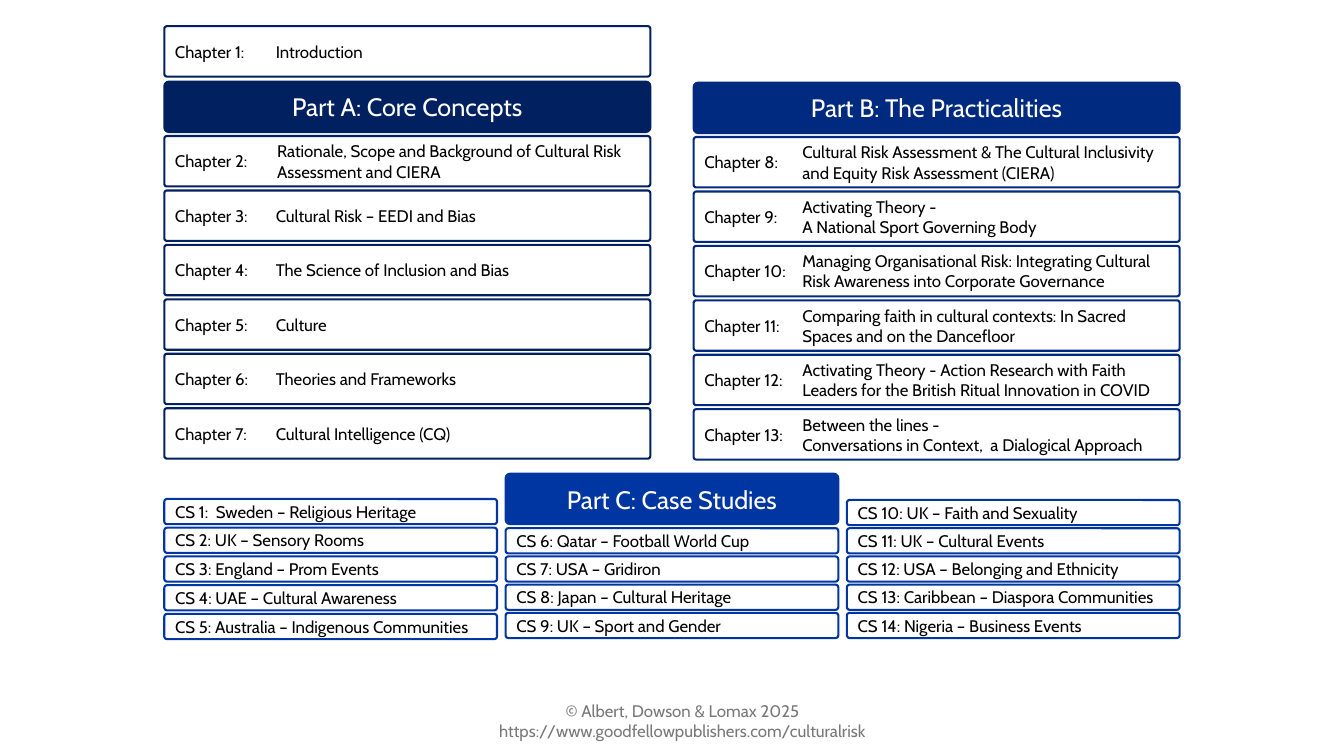
from pptx import Presentation
from pptx.dml.color import RGBColor
from pptx.enum import shapes, text
from pptx.util import Inches, Pt

FONT = "Cabin"
COLORS = {"core": "002060", "practice": "002A7F", "cases": "0036A1",
          "white": "FFFFFF", "black": "000000", "grey": "797979"}

INTRODUCTION = "Introduction"
# heading, colour, left, top, title offset, first chapter, chapter titles
PARTS = [
    ("Part A: Core Concepts", "core", 1.63, 0.81, 1.02, 2, [
        "Rationale, Scope and Background of Cultural Risk Assessment and CIERA",
        "Cultural Risk – EEDI and Bias",
        "The Science of Inclusion and Bias",
        "Culture",
        "Theories and Frameworks",
        "Cultural Intelligence (CQ)",
    ]),
    ("Part B: The Practicalities", "practice", 6.88, 0.82, 0.98, 8, [
        "Cultural Risk Assessment & The Cultural Inclusivity and Equity Risk Assessment (CIERA)",
        "Activating Theory -\nA National Sport Governing Body",
        "Managing Organisational Risk: Integrating Cultural Risk Awareness into Corporate Governance",
        "Comparing faith in cultural contexts: In Sacred Spaces and on the Dancefloor",
        "Activating Theory - Action Research with Faith Leaders for the British Ritual Innovation in COVID",
        "Between the lines -\nConversations in Context,  a Dialogical Approach",
    ]),
]
CASES_HEADING = "Part C: Case Studies"
# top, row step, case studies
CASE_COLUMNS = [
    (4.95, 0.285, ["CS 1:  Sweden – Religious Heritage", "CS 2: UK – Sensory Rooms",
                   "CS 3: England – Prom Events", "CS 4: UAE – Cultural Awareness",
                   "CS 5: Australia – Indigenous Communities"]),
    (5.24, 0.28, ["CS 6: Qatar – Football World Cup", "CS 7: USA – Gridiron",
                  "CS 8: Japan – Cultural Heritage", "CS 9: UK – Sport and Gender"]),
    (4.96, 0.28, ["CS 10: UK – Faith and Sexuality", "CS 11: UK – Cultural Events",
                  "CS 12: USA – Belonging and Ethnicity",
                  "CS 13: Caribbean – Diaspora Communities",
                  "CS 14: Nigeria – Business Events"]),
]
FOOTER = "© Albert, Dowson & Lomax 2025 https://www.goodfellowpublishers.com/culturalrisk"

PART_WIDTH, BAR_HEIGHT, CHAPTER_STEP = 4.82, 0.5, 0.54
CASE_LEFT, CASE_WIDTH, CASE_HEIGHT, CASE_STEP = 1.63, 3.3, 0.25, 3.385
ONE_LINE = 40  # longest title that fits beside its chapter number


def rgb(name):
    return RGBColor.from_string(COLORS[name])


def write(shape, words, size=12, color="black", align=text.PP_ALIGN.LEFT):
    frame = shape.text_frame
    frame.word_wrap = True
    frame.vertical_anchor = text.MSO_ANCHOR.MIDDLE
    frame.text = words
    for paragraph in frame.paragraphs:
        paragraph.alignment = align
        for run in paragraph.runs:
            run.font.name = FONT
            run.font.size = Pt(size)
            run.font.color.rgb = rgb(color)


def add_bar(slide, box, words, fill, line, rounding, **style):
    bar = slide.shapes.add_shape(shapes.MSO_SHAPE.ROUNDED_RECTANGLE, *map(Inches, box))
    bar.adjustments[0] = rounding
    bar.shadow.inherit = False
    bar.fill.solid()
    bar.fill.fore_color.rgb = rgb(fill)
    bar.line.color.rgb = rgb(line)
    bar.line.width = Pt(1.5)
    write(bar, words, **style)


def add_heading(slide, left, top, width, words, color):
    add_bar(slide, (left, top, width, BAR_HEIGHT), words, color, color, 0.09,
            size=18, color="white", align=text.PP_ALIGN.CENTER)


def add_label(slide, box, words, **style):
    write(slide.shapes.add_textbox(*map(Inches, box)), words, **style)


def add_chapter(slide, left, top, number, title, color, title_offset):
    """Long titles get their own box, so the number stays centred beside two lines."""
    label = f"Chapter {number}:"
    is_long = len(title) > ONE_LINE
    add_bar(slide, (left, top, PART_WIDTH, BAR_HEIGHT),
            label if is_long else f"{label} \t{title}", "white", color, 0.05)
    if is_long:
        title_box = (left + title_offset, top, PART_WIDTH - title_offset, BAR_HEIGHT)
        add_label(slide, title_box, title)


def main():
    deck = Presentation()
    deck.slide_width, deck.slide_height = Inches(13.33), Inches(7.5)
    slide = deck.slides.add_slide(deck.slide_layouts[6])

    add_label(slide, (4.42, 6.95, 4.7, 0.4), FOOTER,
              color="grey", align=text.PP_ALIGN.CENTER)

    add_chapter(slide, 1.63, 0.26, 1, INTRODUCTION, "core", 1.02)
    for heading, color, left, top, offset, first, titles in PARTS:
        add_heading(slide, left, top, PART_WIDTH, heading, color)
        for row, title in enumerate(titles, start=1):
            add_chapter(slide, left, top + row * CHAPTER_STEP, first + row - 1,
                        title, color, offset)

    add_heading(slide, CASE_LEFT + CASE_STEP, 4.7, CASE_WIDTH, CASES_HEADING, "cases")
    for column, (top, step, studies) in enumerate(CASE_COLUMNS):
        left = CASE_LEFT + column * CASE_STEP
        for row, study in enumerate(studies):
            add_bar(slide, (left, top + row * step, CASE_WIDTH, CASE_HEIGHT),
                    study, "white", "cases", 0.11)

    deck.save("out.pptx")


if __name__ == "__main__":
    main()
